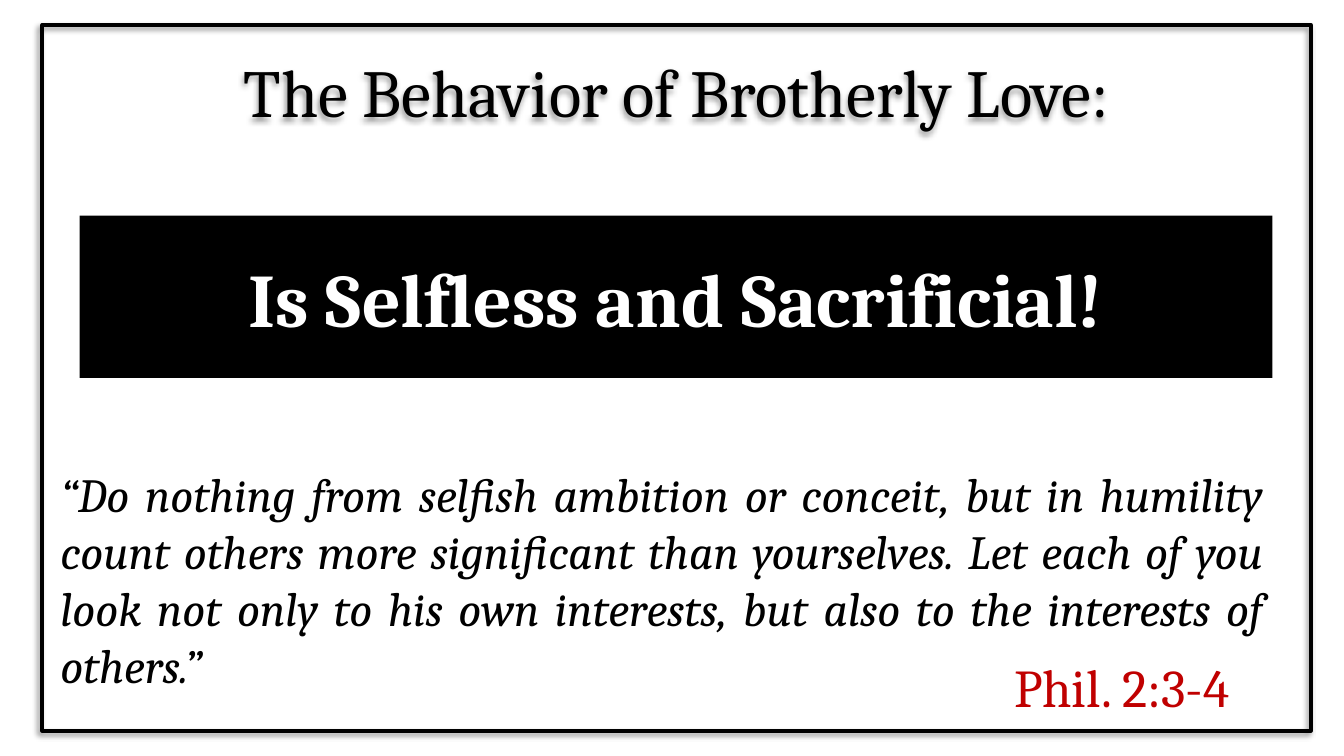
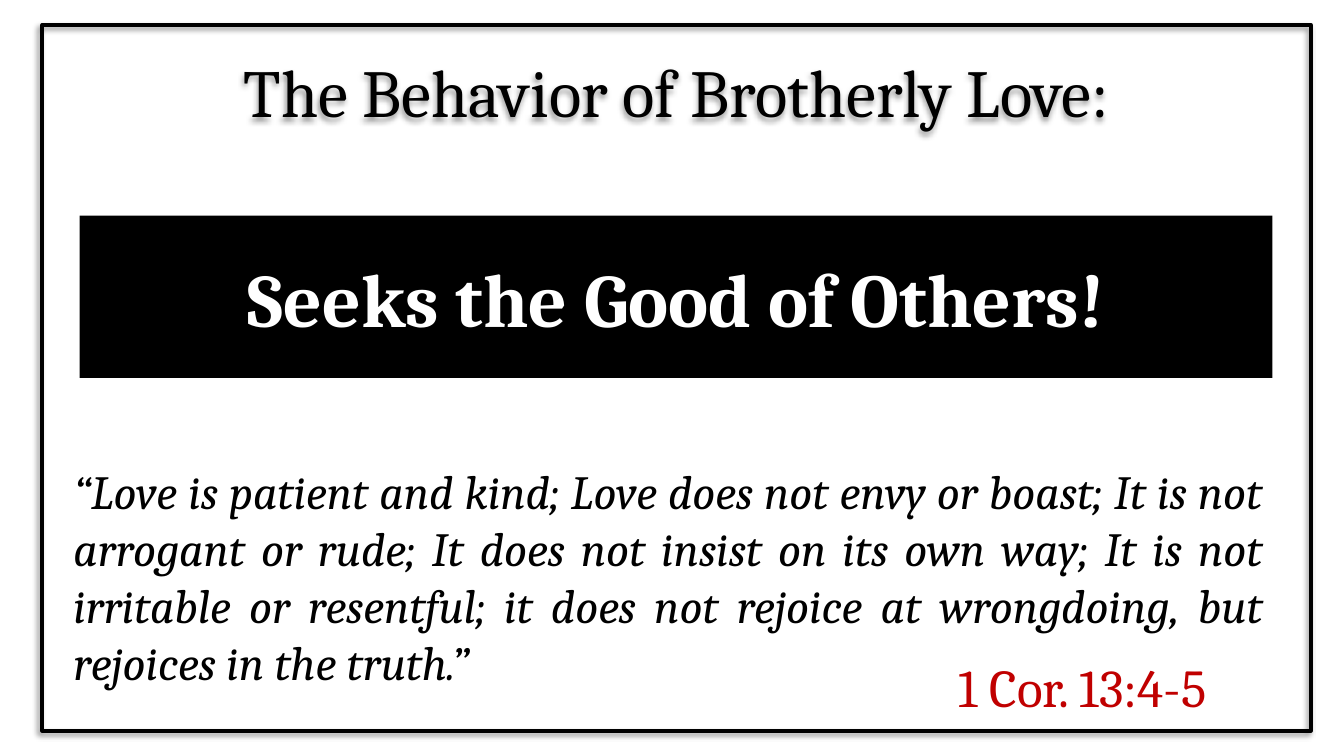
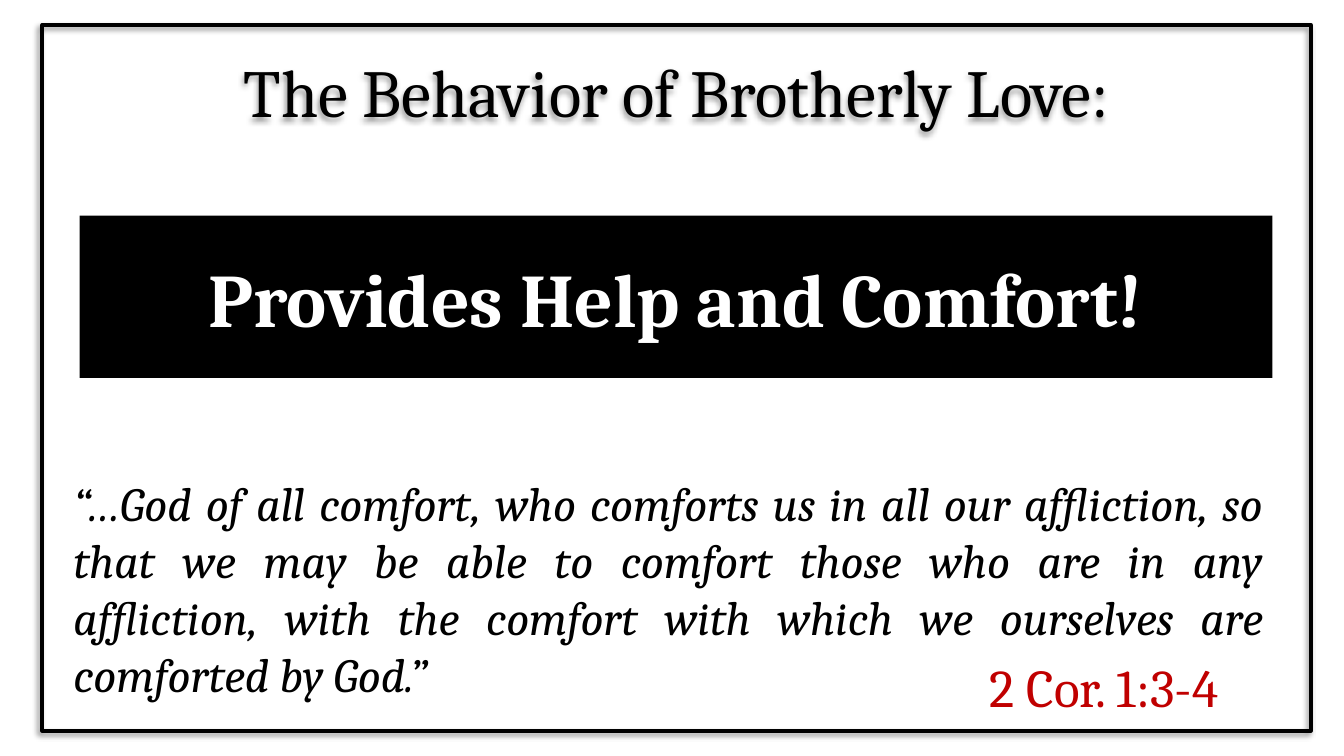
import pptx
import pptx.dml.color
import pptx.enum.shapes
import pptx.enum.text
import pptx.oxml
import pptx.oxml.ns
import pptx.util

BLACK = pptx.dml.color.RGBColor(0x00, 0x00, 0x00)
WHITE = pptx.dml.color.RGBColor(0xFF, 0xFF, 0xFF)
RED = pptx.dml.color.RGBColor(0xC0, 0x00, 0x00)
FONT = "Cambria"
SCALE = 9144  # EMU in one px, 100 px to the inch

ALIGN = pptx.enum.text.PP_ALIGN
ANCHOR = pptx.enum.text.MSO_ANCHOR
GROW = pptx.enum.text.MSO_AUTO_SIZE.SHAPE_TO_FIT_TEXT
RECT = pptx.enum.shapes.MSO_SHAPE.RECTANGLE

SHADOW = (
    f'<a:outerShdw {pptx.oxml.ns.nsdecls("a")} blurRad="50800" dist="38100"'
    ' dir="8100000" algn="tr" rotWithShape="0">'
    '<a:srgbClr val="000000"><a:alpha val="40000"/></a:srgbClr></a:outerShdw>'
)

TITLE = "The Behavior of Brotherly Love:"

# Band text, verse and its left, top, width, reference and its left, width
VERSES = [
    ("Is Selfless and Sacrificial!",
     "“Do nothing from selfish ambition or conceit, but in humility count "
     "others more significant than yourselves. Let each of you look not only "
     "to his own interests, but also to the interests of others.”",
     (50, 456, 1213), "Phil. 2:3-4", (996, 287)),
    ("Seeks the Good of Others!",
     "“Love is patient and kind; Love does not envy or boast; It is not "
     "arrogant or rude; It does not insist on its own way; It is not "
     "irritable or resentful; it does not rejoice at wrongdoing, but "
     "rejoices in the truth.”",
     (63, 453, 1200), "1 Cor. 13:4-5", (941, 322)),
    ("Provides Help and Comfort!",
     "“…God of all comfort, who comforts us in all our affliction, so that "
     "we may be able to comfort those who are in any affliction, with the "
     "comfort with which we ourselves are comforted by God.”",
     (63, 465, 1200), "2 Cor. 1:3-4", (972, 318)),
]


class Deck:
    def __init__(self, wide, high):
        self.prs = pptx.Presentation()
        self.prs.slide_width = wide * SCALE
        self.prs.slide_height = high * SCALE
        self.slide = None

    def start(self):
        self.slide = self.prs.slides.add_slide(self.prs.slide_layouts[6])

    def label(self, shape, text, size, color, align, bold=False, slant=False):
        frame = shape.text_frame
        frame.word_wrap = True
        frame.text = text
        para = frame.paragraphs[0]
        para.alignment = align
        font = para.runs[0].font
        font.name, font.size = FONT, pptx.util.Pt(size)
        font.color.rgb = color
        font.bold, font.italic = bold, slant
        return frame

    def box(self, x, y, w, h):
        return self.slide.shapes.add_textbox(*(n * SCALE for n in (x, y, w, h)))

    def rect(self, x, y, w, h):
        shape = self.slide.shapes.add_shape(
            RECT, *(n * SCALE for n in (x, y, w, h)))
        shape.shadow.inherit = False
        return shape

    def shade(self, shape):
        shape.shadow.inherit = False
        effects = shape.element.spPr.find(pptx.oxml.ns.qn("a:effectLst"))
        effects.append(pptx.oxml.parse_xml(SHADOW))

    def title(self, text):
        box = self.box(51, 39, 1240, 112)
        frame = self.label(box, text, 48, BLACK, ALIGN.CENTER)
        frame.vertical_anchor = ANCHOR.MIDDLE
        frame.paragraphs[0].line_spacing = 0.9
        self.shade(box)

    def verse(self, text, x, y, w):
        frame = self.label(self.box(x, y, w, 239), text, 34, BLACK,
                           ALIGN.JUSTIFY, slant=True)
        frame.auto_size = GROW

    def source(self, text, x, w):
        frame = self.label(self.box(x, 644, w, 74), text, 38, RED, ALIGN.LEFT)
        frame.auto_size = GROW

    def border(self):
        shape = self.rect(42, 25, 1258, 700)
        shape.fill.background()
        shape.line.color.rgb = BLACK
        shape.line.width = pptx.util.Pt(3)
        self.shade(shape)

    def band(self, text):
        shape = self.rect(79, 214, 1183, 161)
        shape.fill.solid()
        shape.fill.fore_color.rgb = BLACK
        shape.line.fill.background()
        frame = self.label(shape, text, 54, WHITE, ALIGN.CENTER, bold=True)
        frame.vertical_anchor = ANCHOR.MIDDLE


def main():
    deck = Deck(1333, 750)
    for claim, verse, place, source, spot in VERSES:
        deck.start()
        deck.title(TITLE)
        deck.verse(verse, *place)
        deck.source(source, *spot)
        deck.border()
        deck.band(claim)
    deck.prs.save("out.pptx")


if __name__ == "__main__":
    main()
